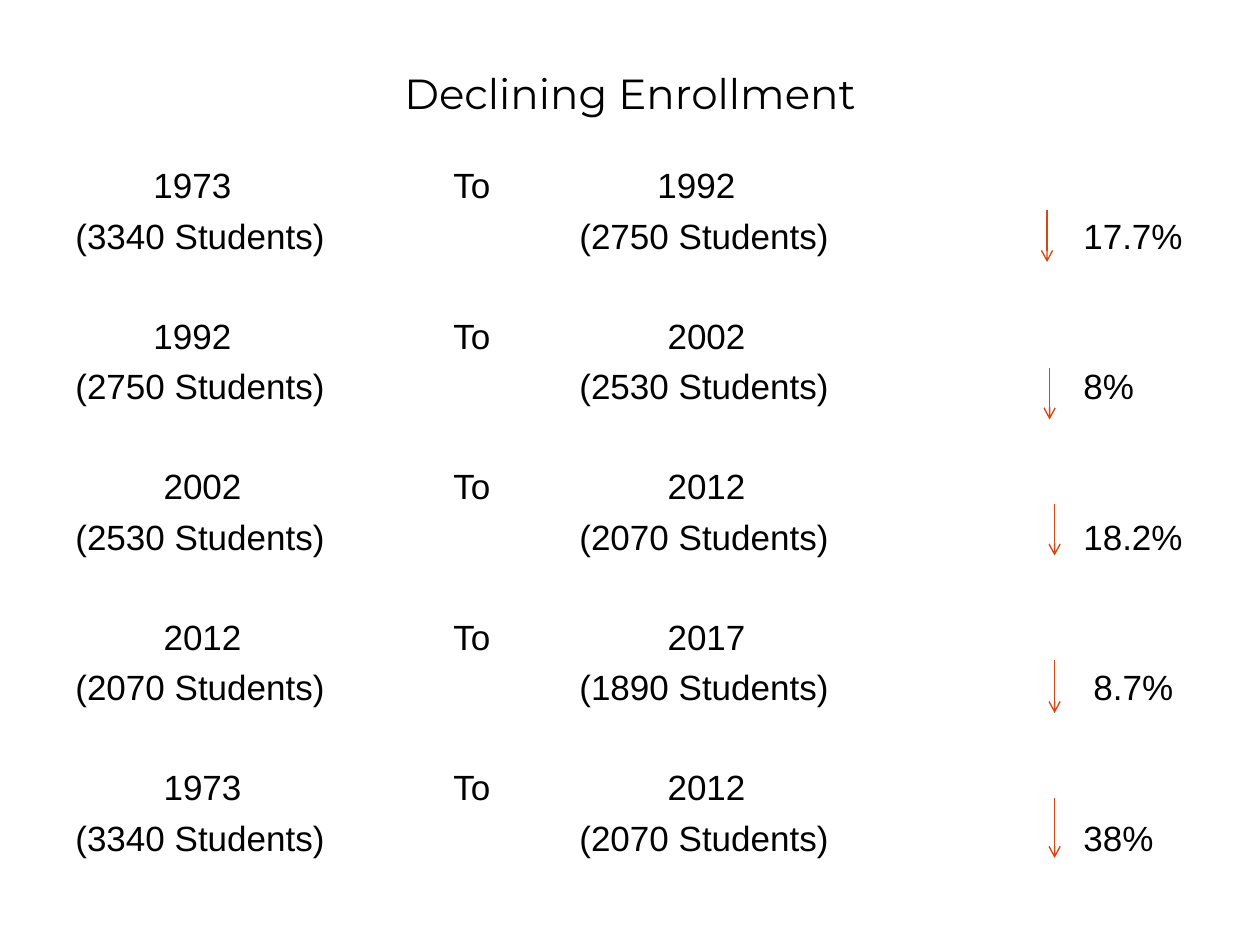
from pptx import Presentation
from pptx.util import Inches, Pt
from pptx.dml.color import RGBColor
from pptx.enum.shapes import MSO_CONNECTOR as Link
from pptx.enum.text import MSO_ANCHOR as Anchor, PP_ALIGN as Align
from pptx.oxml.ns import qn
from lxml.etree import SubElement as Sub

WIDE, HIGH = 10, 7.5
LEFT, SPAN = WIDE * 0.05, WIDE * 0.9
NEAR, FAR = 0.62, 0.7
MID, NEXT, LAST = 3, 4, 8
BLACK, RUST = "000000", "D34817"

ROWS = [
    ("1973", NEAR, "3340", "1992", NEAR, "2750", "17.7%", 0, (8.31, 1.67, 0.41)),
    ("1992", NEAR, "2750", "2002", FAR, "2530", "8%", 0, (8.33, 2.92, 0.41)),
    ("2002", FAR, "2530", "2012", FAR, "2070", "18.2%", 0, (8.37, 4, 0.41)),
    ("2012", FAR, "2070", "2017", FAR, "1890", "8.7%", 0.08, (8.37, 5.24, 0.42)),
    ("1973", FAR, "3340", "2012", FAR, "2070", "38%", 0, (8.37, 6.33, 0.48)),
]


def paint(color, code):
    color.rgb = RGBColor.from_string(code)


def add_box(slide, top, height, anchor):
    box = slide.shapes.add_textbox(
        Inches(LEFT), Inches(top), Inches(SPAN), Inches(height))
    frame = box.text_frame
    frame.word_wrap = True
    frame.vertical_anchor = anchor
    return frame


def add_run(para, text, face, size):
    run = para.add_run()
    run.text = text
    run.font.name = face
    run.font.size = Pt(size)
    paint(run.font.color, BLACK)


def add_line(para, text, gap, stops):
    para.space_before = Pt(gap)
    tabs = Sub(para._p.get_or_add_pPr(), qn("a:tabLst"))
    for stop in stops:
        Sub(tabs, qn("a:tab"), pos=str(Inches(stop)), algn="l")
    add_run(para, text, "Arial", 20)


def add_arrow(slide, x, top, length):
    line = slide.shapes.add_connector(
        Link.STRAIGHT, Inches(x), Inches(top), Inches(x), Inches(top + length))
    line.line.width = Pt(0.79)
    paint(line.line.color, RUST)
    Sub(line.line._get_or_add_ln(), qn("a:tailEnd"), type="arrow")
    Sub(line._element.spPr, qn("a:effectLst"))


def main():
    deck = Presentation()
    deck.slide_width, deck.slide_height = Inches(WIDE), Inches(HIGH)
    slide = deck.slides.add_slide(deck.slide_layouts[6])

    title = add_box(slide, 0.3, 0.87, Anchor.MIDDLE).paragraphs[0]
    title.alignment = Align.CENTER
    add_run(title, "Declining Enrollment", "Montserrat", 24)

    body = add_box(slide, 1.25, 6, Anchor.TOP)
    para, gap = body.paragraphs[0], 2
    for start, inset, before, end, shift, after, drop, nudge, arrow in ROWS:
        add_line(para, f"\t{start}\tTo\t{end}", gap, (inset, MID, NEXT + shift))
        add_line(body.add_paragraph(),
                 f"({before} Students)\t({after} Students)\t{drop}",
                 5, (NEXT, LAST + nudge))
        add_arrow(slide, *arrow)
        if arrow != ROWS[-1][-1]:
            para, gap = body.add_paragraph(), 33

    deck.save("out.pptx")


if __name__ == "__main__":
    main()
